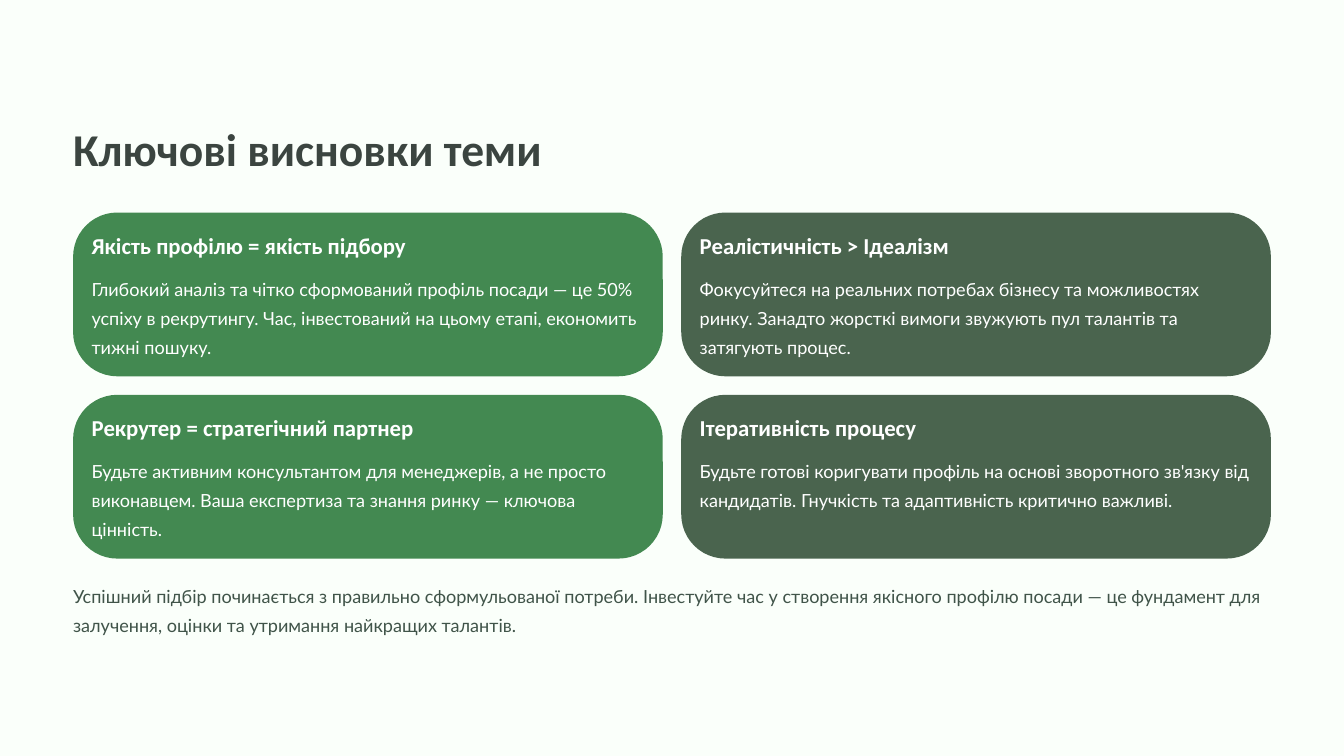
"""Build a slide of key takeaways: a title, a two by two grid of cards and a closing line."""
import pptx
import pptx.dml.color
import pptx.enum.shapes
import pptx.enum.text
import pptx.util

Inches = pptx.util.Inches
COLORS = {
    "background": "FAFFFA",
    "title": "3B4540",
    "green": "438951",
    "dark": "4A644E",
    "white": "FFFFFF",
    "closing": "405449",
}
SLIDE_WIDTH, SLIDE_HEIGHT = 16, 9
MARGIN = 0.87
CONTENT_WIDTH = SLIDE_WIDTH - 2 * MARGIN
GAP = 0.22
GRID_TOP = 2.53
CARD_WIDTH = (CONTENT_WIDTH - GAP) / 2
CARD_HEIGHT = 1.95
INNER_WIDTH = CARD_WIDTH - 2 * GAP
CARD_FILLS = ["green", "dark"]
CARDS = [
    ("Якість профілю = якість підбору",
     "Глибокий аналіз та чітко сформований профіль посади — це 50% успіху в рекрутингу. "
     "Час, інвестований на цьому етапі, економить тижні пошуку."),
    ("Реалістичність > Ідеалізм",
     "Фокусуйтеся на реальних потребах бізнесу та можливостях ринку. "
     "Занадто жорсткі вимоги звужують пул талантів та затягують процес."),
    ("Рекрутер = стратегічний партнер",
     "Будьте активним консультантом для менеджерів, а не просто виконавцем. "
     "Ваша експертиза та знання ринку — ключова цінність."),
    ("Ітеративність процесу",
     "Будьте готові коригувати профіль на основі зворотного зв'язку від кандидатів. "
     "Гнучкість та адаптивність критично важливі."),
]

presentation = pptx.Presentation()
presentation.slide_width = Inches(SLIDE_WIDTH)
presentation.slide_height = Inches(SLIDE_HEIGHT)
slide = presentation.slides.add_slide(presentation.slide_layouts[6])


def rgb(name):
    return pptx.dml.color.RGBColor.from_string(COLORS[name])


def add_text(text, *, left, top, width, height, color,
             size=15.5, font="Lato", bold=False, leading=25, wrap=True):
    box = slide.shapes.add_textbox(Inches(left), Inches(top), Inches(width), Inches(height))
    frame = box.text_frame
    frame.word_wrap = wrap
    frame.auto_size = pptx.enum.text.MSO_AUTO_SIZE.NONE
    frame.margin_left = frame.margin_right = frame.margin_top = frame.margin_bottom = 0
    paragraph = frame.paragraphs[0]
    paragraph.line_spacing = pptx.util.Pt(leading)
    run = paragraph.add_run()
    run.text = text
    run.font.name = font
    run.font.size = pptx.util.Pt(size)
    run.font.bold = bold
    run.font.color.rgb = rgb(color)


slide.background.fill.solid()
slide.background.fill.fore_color.rgb = rgb("background")

add_text("Ключові висновки теми", left=MARGIN, top=1.42, width=6.86, height=0.68,
         color="title", size=39, font="Calibri", bold=True, leading=48.5, wrap=False)

for index, (heading, body) in enumerate(CARDS):
    row, column = divmod(index, 2)
    left = MARGIN + column * (CARD_WIDTH + GAP)
    top = GRID_TOP + row * (CARD_HEIGHT + GAP)
    card = slide.shapes.add_shape(
        pptx.enum.shapes.MSO_SHAPE.ROUNDED_RECTANGLE,
        Inches(left), Inches(top), Inches(CARD_WIDTH), Inches(CARD_HEIGHT))
    card.adjustments[0] = 0.27
    card.shadow.inherit = False
    card.fill.solid()
    card.fill.fore_color.rgb = rgb(CARD_FILLS[column])
    card.line.fill.background()
    add_text(heading, left=left + GAP, top=top + GAP, width=INNER_WIDTH, height=0.34,
             color="white", size=19.5, font="Calibri", bold=True, leading=24, wrap=False)
    add_text(body, left=left + GAP, top=top + 0.69, width=INNER_WIDTH, height=1.04,
             color="white")

add_text("Успішний підбір починається з правильно сформульованої потреби. "
         "Інвестуйте час у створення якісного профілю посади — це фундамент для залучення, "
         "оцінки та утримання найкращих талантів.",
         left=MARGIN, top=6.88, width=CONTENT_WIDTH, height=0.69, color="closing")

presentation.save("out.pptx")
